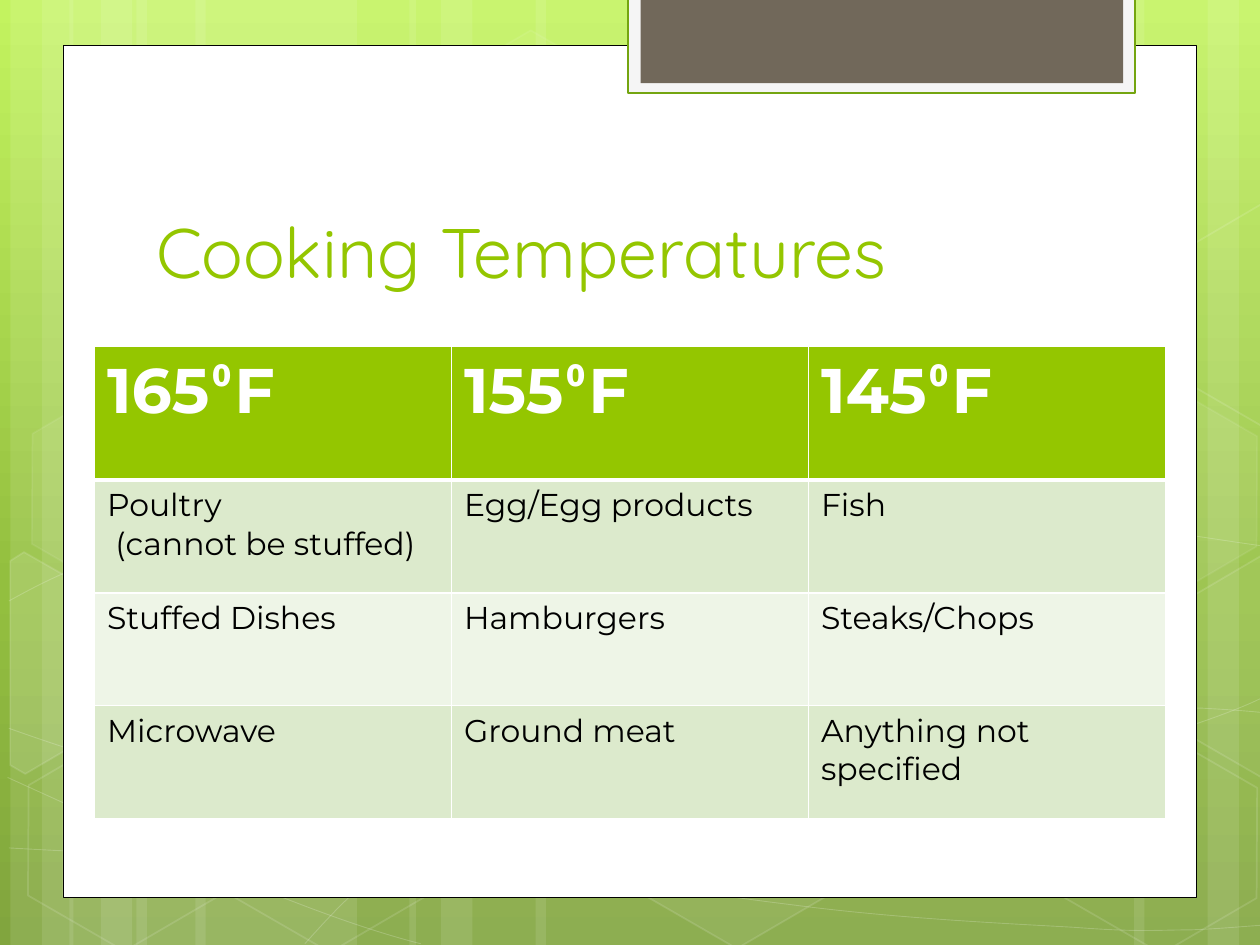
import copy
import math
import pptx
import pptx.util
import pptx.dml.color
import pptx.enum.shapes
import pptx.enum.text
import pptx.oxml.ns
from lxml import etree

WIDE, HIGH = pptx.util.Inches(10), pptx.util.Inches(7.5)
COL, ROW = WIDE / 100, HIGH / 75
KIND = pptx.enum.shapes.MSO_SHAPE
WHITE, LIME = "FFFFFF", "94C600"
SANS = "Montserrat"
TILT = 30

BARS = [(10.83, 17.5, 0), (0.83, 5, 0), (3.33, 8.33, 0), (15.5, 17.5, 0), (5.5, 5, 0),
        (8, 8.33, 0), (73.33, 17.5, 180), (95.83, 5, 180), (90, 8.33, 180),
        (42.5, 30.83, 0), (32.5, 5, 0), (35, 8.33, 0)]

WAVES = [
    [(0.7, 67.3), (6.1, 67.6), (11.5, 67.9), (19, 67.8), (26.5, 67.7), (35.8, 67.5),
     (45.8, 66.5), (55.8, 65.5), (70, 63.6), (79.2, 61.7), (88.3, 59.8), (97.7, 56.8),
     (100.7, 55.1)],
    [(0.7, 47.7), (3.6, 46.1), (6.5, 44.6), (12.1, 43.1), (17.8, 41.6), (25.9, 39.4),
     (34.7, 38.7), (43.6, 38), (54.4, 37.9), (65.4, 38.7), (76.4, 39.5), (94.7, 42.6),
     (100.7, 43.4)],
    [(0.6, 61.7), (12.7, 67.2), (24.7, 72.7), (33.4, 74.9)],
    [(0.7, 57.8), (3.8, 58.9), (7, 60), (12.8, 61.6), (18.6, 63.1), (27.3, 65.6),
     (35.7, 67.3), (44, 69), (54.5, 70.8), (62.8, 71.8), (71.1, 72.9), (80, 73.3),
     (85.3, 73.6), (90.5, 74), (91.9, 73.8), (94.5, 73.8), (97.1, 73.7), (98.9, 73.5),
     (100.7, 73.4)],
    [(24.2, 74.9), (26, 72.9), (27.8, 70.9), (30.2, 69.1), (32.6, 67.3), (36, 65.3),
     (38.8, 63.9), (41.6, 62.5), (43.3, 61.9), (47, 60.9), (50.6, 59.9), (57.3, 58.5),
     (60.8, 57.8), (64.4, 57.1), (64.9, 57.1), (68, 56.9), (71.1, 56.6), (76, 56.3),
     (79.4, 56.2), (82.9, 56.1), (88.6, 56.2), (88.6, 56.2), (90.8, 56.2), (93.1, 56.2),
     (95.3, 56.2), (97.1, 56.3), (98.8, 56.4), (100.6, 56.6)],
]

HEXES = [(33.4, 3.6, 4, 8), (49.7, 58.9, 6, 12), (1.1, 59.1, 0, 12),
         (1.4, 31.2, 7, 8), (17.4, 59.2, 0, 12), (75.3, 45.3, 10, 12),
         (83.4, 59.3, 0, 12), (83.4, 31.4, 7, 8)]

LEFT = [(0.8, 44.5), (1.9, 43.8), (9.6, 48.2), (9.5, 57), (2, 61.4), (0.8, 60.7)]
RIGHT = [(92.6, 48.5), (100.1, 44.1), (100.9, 44.6), (100.9, 61.3), (100.2, 61.7),
         (92.6, 57.3)]
UPPER = [(x, y - 27.9) for x, y in RIGHT]
PARTS = [(LEFT, (3.6, 53.5), 10), (RIGHT, (98.5, 52), 4), (UPPER, (98.5, 24.1), 0)]

HEADS = ["165", "155", "145"]
FOODS = [["Poultry\n (cannot be stuffed)", "Egg/Egg products", "Fish"],
         ["Stuffed Dishes", "Hamburgers", "Steaks/Chops"],
         ["Microwave", "Ground meat", "Anything not specified"]]


def hue(code):
    return pptx.dml.color.RGBColor.from_string(code)


def box(left, top, width, height):
    return [round(n) for n in (left * COL, top * ROW, width * COL, height * ROW)]


def tag(name):
    return pptx.oxml.ns.qn("a:" + name)


def fade(node, share):
    if share < 100:
        tint = node.find(tag("solidFill")).find(tag("srgbClr"))
        etree.SubElement(tint, tag("alpha")).set("val", str(share * 1000))


def paint(shape, fill=None, clear=100, line=None, size=1, thin=100):
    shape.shadow.inherit = False
    if fill and clear:
        shape.fill.solid()
        shape.fill.fore_color.rgb = hue(fill)
        fade(shape.element.spPr, clear)
    else:
        shape.fill.background()
    if line:
        shape.line.color.rgb = hue(line)
        shape.line.width = pptx.util.Pt(size)
        fade(shape.element.spPr.find(tag("ln")), thin)
    else:
        shape.line.fill.background()


def block(slide, area, turn=0, **look):
    shape = slide.shapes.add_shape(KIND.RECTANGLE, *box(*area))
    shape.rotation = turn
    paint(shape, **look)


def trace(slide, spots, close):
    (left, top), *rest = [(x * COL, y * ROW) for x, y in spots]
    pen = slide.shapes.build_freeform(left, top)
    pen.add_line_segments(rest, close=close)
    return pen.convert_to_shape()


def wave(slide, knots):
    shape = trace(slide, knots, False)
    lines = list(shape.element.iter(tag("lnTo")))
    for i in range(0, len(lines), 3):
        curve = etree.Element(tag("cubicBezTo"))
        lines[i].addprevious(curve)
        for line in lines[i:i + 3]:
            curve.append(line[0])
            line.getparent().remove(line)
    paint(shape, line=WHITE, size=0.5, thin=20)


def part(slide, spots, mid, clear):
    cos, sin = math.cos(math.radians(TILT)), math.sin(math.radians(TILT))
    gaps = [(x - mid[0], y - mid[1]) for x, y in spots]
    flat = [(mid[0] + x * cos + y * sin, mid[1] + y * cos - x * sin) for x, y in gaps]
    shape = trace(slide, flat, True)
    shape.rotation = TILT
    paint(shape, WHITE, clear, WHITE, 1, 12)


def hexa(slide, left, top, clear, thin):
    shape = slide.shapes.add_shape(KIND.HEXAGON, *box(left, top, 17.5, 15.2))
    shape.adjustments[0] = 0.285
    shape.rotation = TILT
    paint(shape, WHITE, clear, WHITE, 1, thin)


def wash(slide):
    fill = slide.background.fill
    fill.gradient()
    fill.gradient_angle = 270
    first, last = fill.gradient_stops
    first.color.rgb, first.position = hue("93BF3F"), 0.62
    last.color.rgb, last.position = hue("81A53E"), 1
    stops = next(slide.element.iter(tag("gsLst")))
    stop = copy.deepcopy(stops[0])
    stop.set("pos", "0")
    stop.find(tag("srgbClr")).set("val", "C3F35F")
    stops.insert(0, stop)


def write(para, text, size, font, code, bold=False):
    run = para.add_run()
    run.text = text
    run.font.size = pptx.util.Pt(size)
    run.font.name = font
    run.font.bold = bold
    run.font.color.rgb = hue(code)


def title(slide):
    frame = slide.shapes.add_textbox(*box(11.4, 11.2, 76.8, 12.5)).text_frame
    frame.word_wrap = True
    frame.vertical_anchor = pptx.enum.text.MSO_ANCHOR.BOTTOM
    write(frame.paragraphs[0], "Cooking Temperatures", 40, "Quicksand", LIME)


def dress(cell, code, top, base):
    props = cell._tc.get_or_add_tcPr()
    for side, size in (("L", 1), ("R", 1), ("T", top), ("B", base)):
        edge = etree.SubElement(props, tag("ln" + side), w=str(pptx.util.Pt(size)))
        solid = etree.SubElement(edge, tag("solidFill"))
        etree.SubElement(solid, tag("srgbClr"), val=WHITE)
    cell.fill.solid()
    cell.fill.fore_color.rgb = hue(code)


def chart(slide):
    grid = slide.shapes.add_table(4, 3, *box(7.5, 27.5, 85, 37.45)).table
    for i, row in enumerate(grid.rows):
        row.height = round((8.95 if i else 10.6) * ROW)
    for i, head in enumerate(HEADS):
        cell = grid.cell(0, i)
        dress(cell, LIME, 1, 3)
        para = cell.text_frame.paragraphs[0]
        for text, font in ((head, SANS), ("⁰", "Calibri"), ("F", SANS)):
            write(para, text, 36, font, WHITE, True)
    for r, foods in enumerate(FOODS, 1):
        for c, food in enumerate(foods):
            cell = grid.cell(r, c)
            dress(cell, "DCEACC" if r % 2 else "EEF5E7", 3 if r == 1 else 1, 1)
            frame = cell.text_frame
            for n, text in enumerate(food.split("\n")):
                para = frame.add_paragraph() if n else frame.paragraphs[0]
                write(para, text, 18, SANS, "000000")


def main():
    deck = pptx.Presentation()
    deck.slide_width, deck.slide_height = WIDE, HIGH
    slide = deck.slides.add_slide(deck.slide_layouts[6])
    wash(slide)
    for left, width, turn in BARS:
        block(slide, (left, 0, width, 75), turn, fill=WHITE, clear=10)
    for knots in WAVES:
        wave(slide, knots)
    for spec in HEXES:
        hexa(slide, *spec)
    for spec in PARTS:
        part(slide, *spec)
    block(slide, (5, 3.6, 90, 67.65), fill=WHITE, line="000000", size=0.5)
    block(slide, (49.85, -0.2, 40.25, 7.6), fill="F5F5F5", line="74A510", size=1.25)
    block(slide, (50.85, -0.2, 38.3, 6.8), fill="71685A")
    title(slide)
    chart(slide)
    deck.save("out.pptx")


if __name__ == "__main__":
    main()
